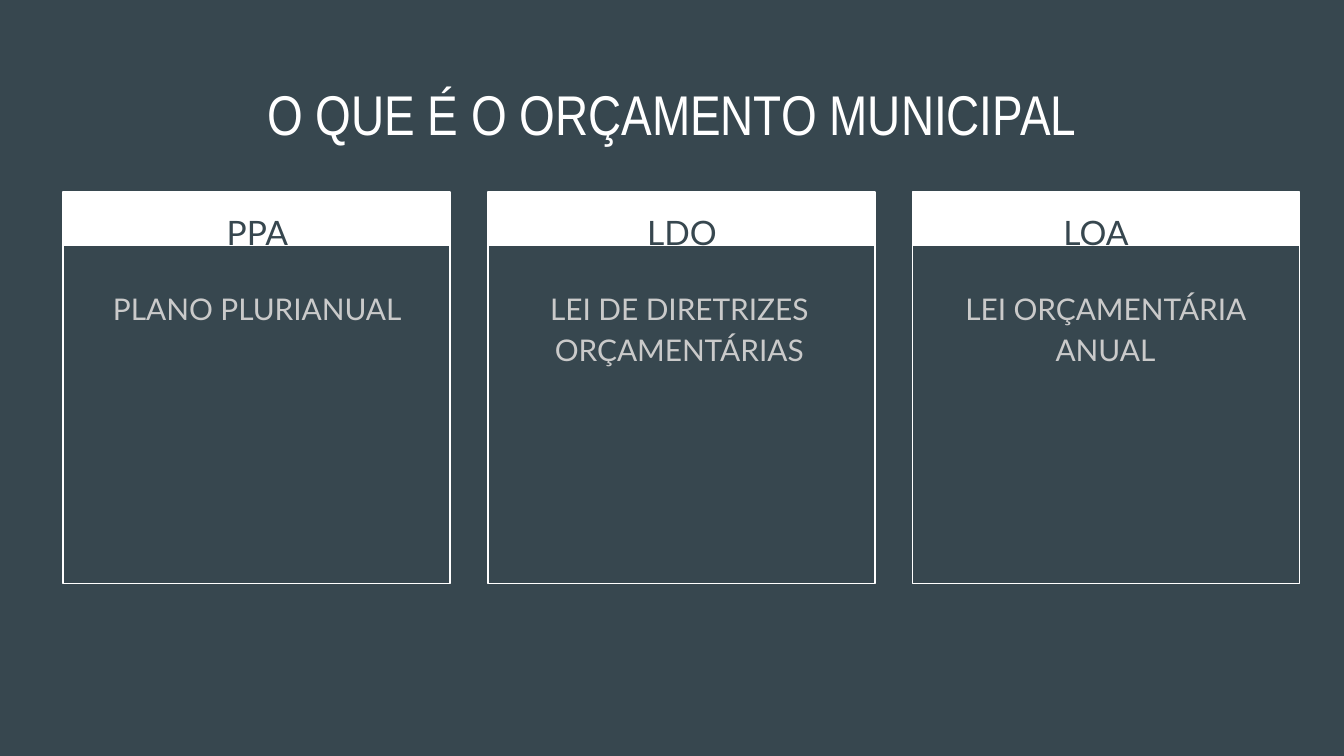
from lxml.etree import SubElement
from pptx import Presentation
from pptx.dml.color import RGBColor
from pptx.enum.shapes import MSO_SHAPE as Preset
from pptx.enum.text import MSO_ANCHOR as Anchor, MSO_AUTO_SIZE as AutoSize, PP_ALIGN as Align
from pptx.oxml.ns import qn
from pptx.util import Inches, Pt

COLORS = {"slate": "37474F", "white": "FFFFFF", "grey": "CACACA"}

SLIDE_WIDTH = 10
SLIDE_HEIGHT = SLIDE_WIDTH * 9 / 16
CARD_LEFT, CARD_TOP, CARD_STEP = 0.47, 1.43, 3.16
CARD_WIDTH, CARD_HEIGHT, BAR_HEIGHT = 2.88, 2.91, 0.4

CARDS = [
    {"label": "PPA", "label_left": 0.55, "meaning": "PLANO PLURIANUAL",
     "left": 0.56, "width": 2.71, "indent": 0},
    {"label": "LDO", "label_left": 3.71, "meaning": "LEI DE DIRETRIZES ORÇAMENTÁRIAS",
     "left": 3.17, "width": 3.27, "indent": 0.5},
    {"label": "LOA", "label_left": 6.79, "meaning": "LEI ORÇAMENTÁRIA ANUAL",
     "left": 6.87, "width": 2.71, "indent": 0},
]

TITLE = {"size": 30, "name": "Arial Narrow", "color": "white", "spacing": 1.0, "after": 0}
LABEL = {"size": 18, "name": "Lato", "color": "slate", "spacing": 1.15, "after": 0}
MEANING = {"size": 16, "name": "Lato", "color": "grey", "spacing": 1.15, "after": 16}


def color(name):
    return RGBColor.from_string(COLORS[name])


def apply(target, values):
    for name, value in values.items():
        setattr(target, name, value)


def place(box, left, top, width, height):
    apply(box, {"left": Inches(left), "top": Inches(top),
                "width": Inches(width), "height": Inches(height)})


def write_text(box, text, style, indent=0):
    frame = box.text_frame
    inset = Inches(0.1)
    apply(frame, {"word_wrap": True, "auto_size": AutoSize.NONE,
                  "vertical_anchor": Anchor.TOP, "margin_left": inset,
                  "margin_right": inset, "margin_top": inset, "margin_bottom": inset})
    para = frame.paragraphs[0]
    apply(para, {"alignment": Align.CENTER, "line_spacing": style["spacing"],
                 "space_before": Pt(0), "space_after": Pt(style["after"])})
    settings = para._p.get_or_add_pPr()
    settings.set("marL", str(Inches(indent)))
    settings.set("indent", "0")
    SubElement(settings, qn("a:buNone"))
    span = para.add_run()
    span.text = text
    apply(span.font, {"size": Pt(style["size"]), "name": style["name"], "bold": False})
    span.font.color.rgb = color(style["color"])


def add_card(page, left):
    group = page.shapes.add_group_shape()
    for height, filled in ((BAR_HEIGHT, True), (CARD_HEIGHT, False)):
        box = group.shapes.add_shape(Preset.RECTANGLE, Inches(left), Inches(CARD_TOP),
                                     Inches(CARD_WIDTH), Inches(height))
        box.shadow.inherit = False
        if filled:
            box.fill.solid()
            box.fill.fore_color.rgb = color("white")
            box.line.fill.background()
        else:
            box.fill.background()
            box.line.color.rgb = color("white")
            box.line.width = Pt(0.75)


def next_text_box(page, spare):
    if not spare:
        return page.shapes.add_textbox(0, 0, 0, 0)
    box = spare.pop(0)
    box._element.getparent().append(box._element)
    return box


def main():
    deck = Presentation()
    apply(deck, {"slide_width": Inches(SLIDE_WIDTH), "slide_height": Inches(SLIDE_HEIGHT)})
    page = deck.slides.add_slide(deck.slide_layouts.get_by_name("Comparison"))
    page.background.fill.solid()
    page.background.fill.fore_color.rgb = color("slate")

    title = page.shapes.title
    place(title, 0.34, 0.49, 9.32, 0.63)
    write_text(title, "O QUE É O ORÇAMENTO MUNICIPAL", TITLE)

    spare = list(page.placeholders)[1:]
    for index, card in enumerate(CARDS):
        add_card(page, CARD_LEFT + index * CARD_STEP)
        label = next_text_box(page, spare)
        place(label, card["label_left"], CARD_TOP, 2.73, 0.5)
        write_text(label, card["label"], LABEL)
        meaning = next_text_box(page, spare)
        place(meaning, card["left"], 2.02, card["width"], 3.06)
        write_text(meaning, card["meaning"], MEANING, card["indent"])

    deck.save("out.pptx")


if __name__ == "__main__":
    main()
